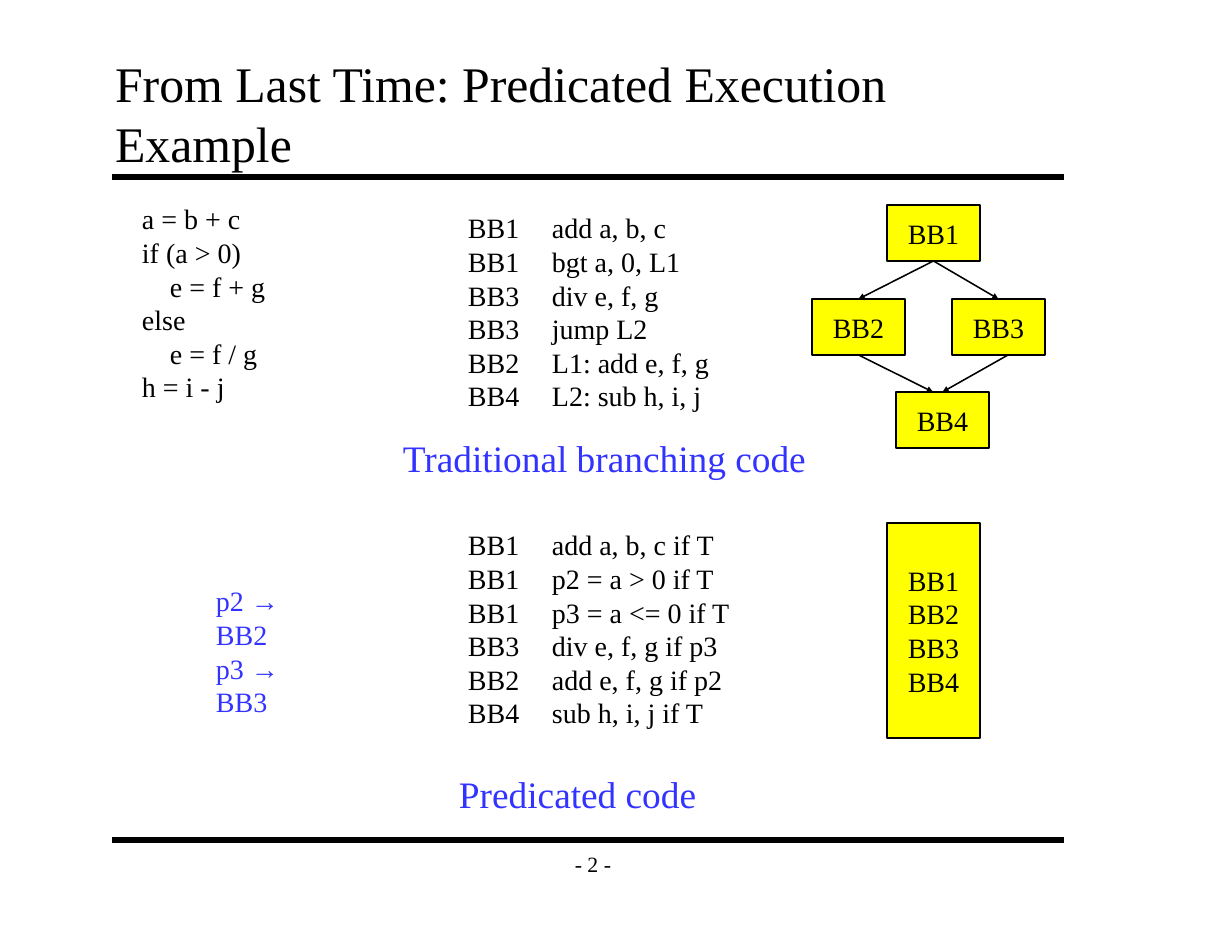
import pptx
import pptx.dml.color
import pptx.enum.shapes
import pptx.enum.text
import pptx.oxml.ns
import pptx.util
from lxml import etree

PX = pptx.util.Inches(1) // 112
FONT = "Times New Roman"
COLORS = {"ink": "000000", "block": "FFFF00", "accent": "3333FF"}
ALIGN = pptx.enum.text.PP_ALIGN
ANCHOR = pptx.enum.text.MSO_ANCHOR
BLOCK_WIDTH, BLOCK_HEIGHT = 93, 56


def color(name):
    """Return the named palette colour."""
    return pptx.dml.color.RGBColor.from_string(COLORS[name])


def write_text(frame, text, size=18, ink="ink", align=ALIGN.LEFT,
               anchor=ANCHOR.TOP, left=11, right=0, indented=()):
    """Fill a text frame, one paragraph for each line of text."""
    frame.word_wrap = True
    frame.vertical_anchor = anchor
    frame.margin_left, frame.margin_right = left * PX, right * PX
    frame.margin_top = frame.margin_bottom = 6 * PX
    for index, line in enumerate(text.split("\n")):
        para = frame.add_paragraph() if index else frame.paragraphs[0]
        para.alignment = align
        if index in indented:
            para._p.get_or_add_pPr().set("marL", str(28 * PX))
        span = para.add_run()
        span.text = line
        span.font.name = FONT
        span.font.size = pptx.util.Pt(size)
        span.font.color.rgb = color(ink)


def add_text(page, place, text, **style):
    """Add a text box at a (left, top, width, height) place."""
    box = page.shapes.add_textbox(*(length * PX for length in place))
    write_text(box.text_frame, text, **style)


def add_block(page, left, top, text, height=BLOCK_HEIGHT):
    """Add a yellow basic block with centred text."""
    block = page.shapes.add_shape(
        pptx.enum.shapes.MSO_SHAPE.RECTANGLE,
        left * PX, top * PX, BLOCK_WIDTH * PX, height * PX)
    block.shadow.inherit = False
    block.fill.solid()
    block.fill.fore_color.rgb = color("block")
    block.line.color.rgb = color("ink")
    block.line.width = pptx.util.Pt(1)
    write_text(block.text_frame, text, align=ALIGN.CENTER,
               anchor=ANCHOR.MIDDLE, right=11)
    return block


def add_line(page, start, end, width=1, arrow=False, source=None, target=None):
    """Add a line, joined to a source's bottom and a target's top if given."""
    line = page.shapes.add_connector(
        pptx.enum.shapes.MSO_CONNECTOR.STRAIGHT,
        *(length * PX for length in start + end))
    if source is not None:
        line.begin_connect(source, 2)
    if target is not None:
        line.end_connect(target, 0)
    line.line.color.rgb = color("ink")
    line.line.width = pptx.util.Pt(width)
    if arrow:
        etree.SubElement(line.line._get_or_add_ln(),
                         pptx.oxml.ns.qn("a:tailEnd"),
                         type="triangle", w="sm", len="sm")
    etree.SubElement(line._element.spPr, pptx.oxml.ns.qn("a:effectLst"))


def add_listing(page, top, rows):
    """Add block labels and their instructions side by side."""
    labels, instructions = zip(*rows)
    add_text(page, (541, top, 200, 213), "\n".join(instructions))
    add_text(page, (457, top, 74, 213), "\n".join(labels))


def add_flow(page):
    """Add the control flow graph of the branching code."""
    first = add_block(page, 887, 205, "BB1")
    second = add_block(page, 812, 299, "BB2")
    last = add_block(page, 896, 392, "BB4")
    third = add_block(page, 952, 299, "BB3")
    add_line(page, (933, 261), (999, 299), arrow=True, source=first, target=third)
    add_line(page, (933, 261), (859, 299), arrow=True, source=first, target=second)
    add_line(page, (859, 355), (933, 392), arrow=True, source=second)
    add_line(page, (1008, 355), (943, 392), arrow=True, target=last)


def main():
    """Build the predicated execution slide."""
    deck = pptx.Presentation()
    deck.slide_width, deck.slide_height = 1232 * PX, 952 * PX
    page = deck.slides.add_slide(deck.slide_layouts[6])
    for y in (177, 840):
        add_line(page, (112, y), (1064, y), width=4)
    add_text(page, (551, 840, 84, 47), "- 2 -", size=14, align=ALIGN.CENTER,
             anchor=ANCHOR.MIDDLE, right=11)
    add_text(page, (103, 103, 952, 75),
             "From Last Time: Predicated Execution Example",
             size=32, anchor=ANCHOR.BOTTOM, left=12)
    add_flow(page)
    add_text(page, (131, 196, 146, 213),
             "a = b + c\nif (a > 0)\ne = f + g\nelse\ne = f / g\nh = i - j",
             indented=(2, 4))
    add_listing(page, 205, [
        ("BB1", "add a, b, c"), ("BB1", "bgt a, 0, L1"),
        ("BB3", "div e, f, g"), ("BB3", "jump L2"),
        ("BB2", "L1: add e, f, g"), ("BB4", "L2: sub h, i, j")])
    add_text(page, (392, 429, 487, 56), "Traditional branching code",
             size=24, ink="accent")
    add_block(page, 887, 523, "BB1\nBB2\nBB3\nBB4", height=215)
    add_listing(page, 522, [
        ("BB1", "add a, b, c if T"), ("BB1", "p2 = a > 0 if T"),
        ("BB1", "p3 = a <= 0 if T"), ("BB3", "div e, f, g if p3"),
        ("BB2", "add e, f, g if p2"), ("BB4", "sub h, i, j if T")])
    add_text(page, (448, 765, 487, 56), "Predicated code",
             size=24, ink="accent")
    add_text(page, (205, 578, 143, 142), "p2 → BB2\np3 → BB3",
             ink="accent", right=32)
    deck.save("out.pptx")


if __name__ == "__main__":
    main()
